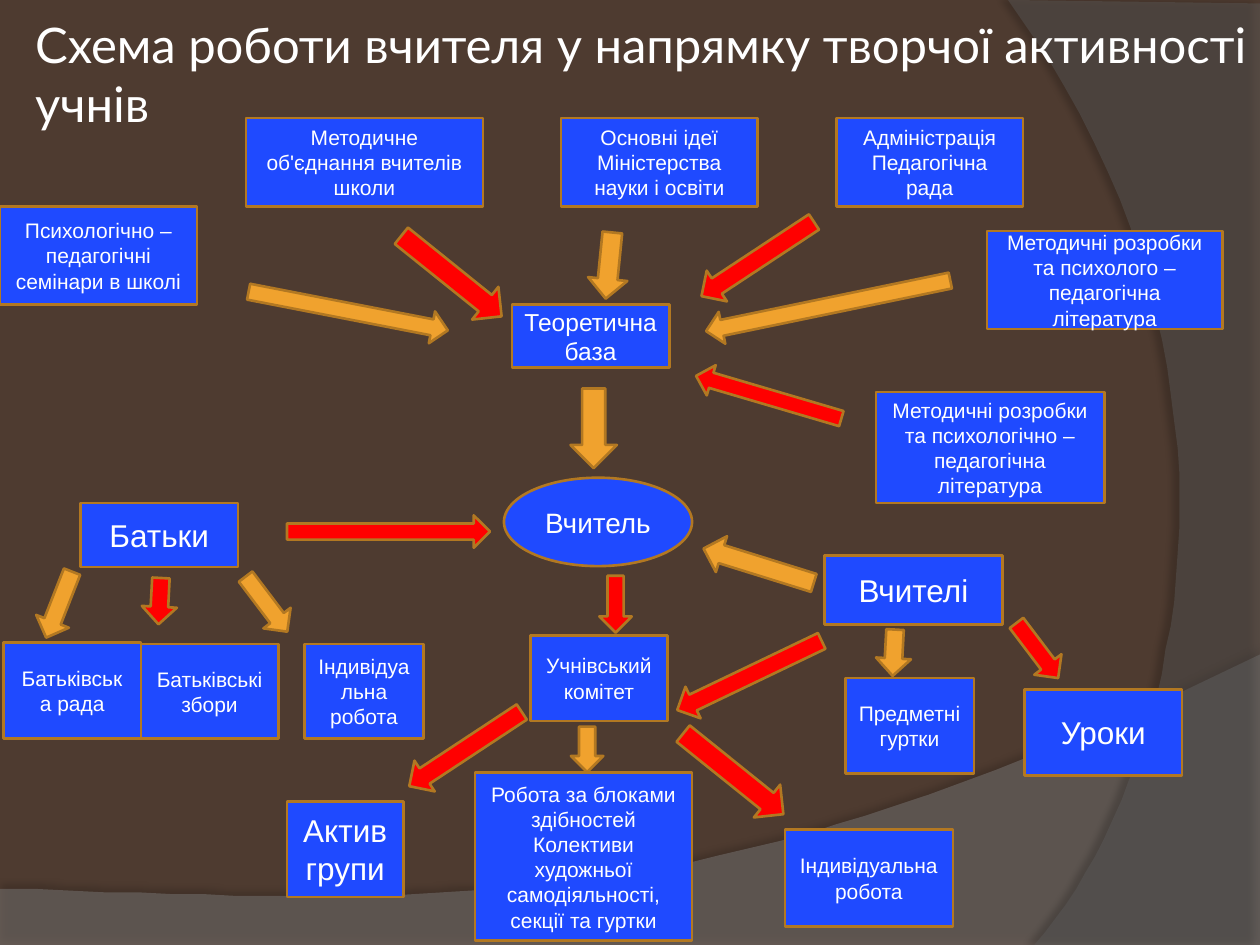
from lxml.etree import SubElement
from pptx import Presentation
from pptx.dml.color import RGBColor
from pptx.enum.shapes import MSO_SHAPE as Preset
from pptx.enum.text import MSO_ANCHOR as Anchor, MSO_AUTO_SIZE as AutoSize, PP_ALIGN as Align
from pptx.oxml.ns import qn
from pptx.util import Pt

BLUE, BROWN, ORANGE, RED, WHITE = "1F4AFF", "B27822", "F0A22E", "FF0000", "FFFFFF"
RIGHT, UP, DOWN = Preset.RIGHT_ARROW, Preset.UP_ARROW, Preset.DOWN_ARROW

BOXES = [
    ("Психологічно – педагогічні семінари в школі", 12, 0, 118, 112.5, 56),
    ("Методичне об'єднання вчителів школи", 12, 140.5, 67.5, 135.5, 50.5),
    ("Основні ідеї Міністерства науки і освіти", 12, 320.5, 67.5, 112.5, 50.5),
    ("Адміністрація Педагогічна рада", 12, 478, 67.5, 106.5, 50.5),
    ("Методичні розробки та психолого – педагогічна література", 12, 564, 132, 134.5, 56),
    ("Теоретична база", 14, 292.5, 174, 90, 36),
    ("Батьки", 18, 46, 287.5, 90, 36.5),
    ("Батьківська рада", 12, 2, 367, 78.5, 55),
    ("Батьківські збори", 12, 80.5, 368, 78.5, 54),
    ("Індивідуальна робота", 12, 174, 368, 68, 54),
    ("Методичні розробки та психологічно – педагогічна література", 12, 500.5, 224, 130.5, 63.5),
    ("Учнівський комітет", 12, 303, 363, 78.5, 49),
    ("Вчителі", 18, 471, 317.5, 102, 39.5),
    ("Актив групи", 18, 164, 458, 66.5, 54.5),
    ("Предметні гуртки", 12, 483, 387.5, 73.5, 54.5),
    ("Індивідуальна робота", 12, 448.5, 474, 96, 55.5),
    ("Уроки", 18, 585.5, 394, 90, 49),
    ("Робота за блоками здібностей Колективи художньої самодіяльності, секції та гуртки",
     12, 271.5, 441.5, 124, 96),
]

ARROWS = [
    (RIGHT, ORANGE, 168.3, 402, 165.5, 142.5, 18.5),
    (RIGHT, ORANGE, 11, 141, 168.5, 116, 18.5),
    (RIGHT, ORANGE, 95.7, 329, 140.5, 38, 22.5),
    (UP, RED, 128.8, 246, 121, 24, 73.5),
    (UP, RED, 236.6, 422.5, 109.5, 21, 77),
    (DOWN, ORANGE, 0, 326, 222, 26.5, 45.5),
    (RIGHT, ORANGE, 52.9, 132.5, 335.5, 39.5, 19.5),
    (RIGHT, ORANGE, 111.4, 13.5, 335.5, 40.5, 20),
    (RIGHT, RED, 0, 164, 294.5, 116, 18.5),
    (RIGHT, RED, 154.4, 382.5, 376, 91.5, 20),
    (RIGHT, RED, 196.4, 396, 218, 86.5, 18),
    (RIGHT, RED, 90, 335.5, 336, 32.5, 18.5),
    (RIGHT, RED, 93, 78, 333.5, 26.5, 20),
    (RIGHT, ORANGE, 197.3, 400.5, 312.5, 66, 21.5),
    (RIGHT, ORANGE, 93, 497.5, 363, 26.5, 20),
    (RIGHT, RED, 52.9, 573, 362, 39.5, 19.5),
    (UP, RED, 128.8, 407, 405.5, 24, 73.5),
    (UP, RED, 236.6, 255.5, 389.5, 21, 77),
    (RIGHT, ORANGE, 90, 322.5, 419, 26, 18.5),
]


def paint(fill, color):
    """Make a fill solid in a hex colour."""
    fill.solid()
    fill.fore_color.rgb = RGBColor.from_string(color)


def add_filled(slide, preset, color, left, top, width, height):
    """Add a preset shape with the brown outline."""
    shape = slide.shapes.add_shape(preset, Pt(left), Pt(top), Pt(width), Pt(height))
    shape.shadow.inherit = False
    paint(shape.fill, color)
    paint(shape.line.fill, BROWN)
    shape.line.width = Pt(1.5)
    return shape


def set_text(shape, text, size, font_name, align):
    """Write one formatted paragraph, centred vertically."""
    frame = shape.text_frame
    frame.word_wrap = True
    frame.vertical_anchor = Anchor.MIDDLE
    frame.text = text
    paragraph = frame.paragraphs[0]
    paragraph.alignment = align
    paragraph.font.name = font_name
    paragraph.font.size = Pt(size)
    paint(paragraph.font.fill, WHITE)


def add_label(slide, text, size, *bounds, preset=Preset.RECTANGLE):
    """Add a blue shape with a centred label."""
    shape = add_filled(slide, preset, BLUE, *bounds)
    set_text(shape, text, size, "Arial", Align.CENTER)


def add_arrow(slide, preset, color, rotation, *bounds):
    """Add a rotated block arrow."""
    add_filled(slide, preset, color, *bounds).rotation = rotation


def curve(start, control_1, control_2, end, steps=40):
    """Return points along a cubic Bezier curve."""
    def point(t):
        """Return the curve point at t."""
        weights = ((1 - t) ** 3, 3 * t * (1 - t) ** 2, 3 * t * t * (1 - t), t ** 3)
        corners = (start, control_1, control_2, end)
        return tuple(sum(w * c[axis] for w, c in zip(weights, corners)) for axis in (0, 1))
    return [point(step / steps) for step in range(steps + 1)]


def add_wave(slide, points, color, opacity, shadow_opacity, distance, direction):
    """Add a translucent background wave with a soft shadow, behind the title."""
    builder = slide.shapes.build_freeform(*points[0], scale=Pt(1))
    builder.add_line_segments(points[1:], close=True)
    wave = builder.convert_to_shape()
    wave.shadow.inherit = False
    wave.line.fill.background()
    paint(wave.fill, color)
    properties = wave.element.spPr
    fill_color = properties.find(qn("a:solidFill"))[0]
    SubElement(fill_color, qn("a:alpha"), val=str(opacity * 1000))
    shadow = SubElement(properties.find(qn("a:effectLst")), qn("a:outerShdw"),
                        blurRad=str(Pt(4)), dist=str(Pt(distance)),
                        dir=str(direction * 60000), algn="ctr", rotWithShape="0")
    shadow_color = SubElement(shadow, qn("a:srgbClr"), val="000000")
    SubElement(shadow_color, qn("a:alpha"), val=str(shadow_opacity * 1000))
    slide.shapes.title.element.addprevious(wave.element)


def add_title(slide, text):
    """Place and format the title placeholder."""
    title = slide.shapes.title
    title.left, title.top, title.width, title.height = Pt(16.5), Pt(0), Pt(703.5), Pt(84)
    set_text(title, text, 28, "Lato", Align.LEFT)
    frame = title.text_frame
    frame.auto_size = AutoSize.NONE
    frame.margin_left = frame.margin_right = Pt(3.6)
    frame.margin_top = frame.margin_bottom = Pt(3.6)


def main():
    """Build the diagram slide."""
    presentation = Presentation()
    presentation.slide_width, presentation.slide_height = Pt(720), Pt(540)
    slide = presentation.slides.add_slide(presentation.slide_layouts[5])
    paint(slide.background.fill, "4E3B30")

    bottom = curve((720, 374.5), (402.5, 525), (281.5, 517.5), (0, 507.5))
    add_wave(slide, [(0, 540), (720, 540)] + bottom, "7F7F7F", 45, 35, 3.5, 270)
    side = curve((591, 540), (673, 445.5), (733, 216), (576, 0))
    add_wave(slide, [(720, 1.5), (720, 540)] + side, "5E5E5E", 40, 45, 4, 180)

    add_title(slide, "Схема роботи вчителя у напрямку творчої активності учнів")
    for arrow in ARROWS:
        add_arrow(slide, *arrow)
    for box in BOXES:
        add_label(slide, *box)
    add_label(slide, "Вчитель", 16, 288, 273, 107.5, 50.5, preset=Preset.FLOWCHART_CONNECTOR)
    presentation.save("out.pptx")


if __name__ == "__main__":
    main()
